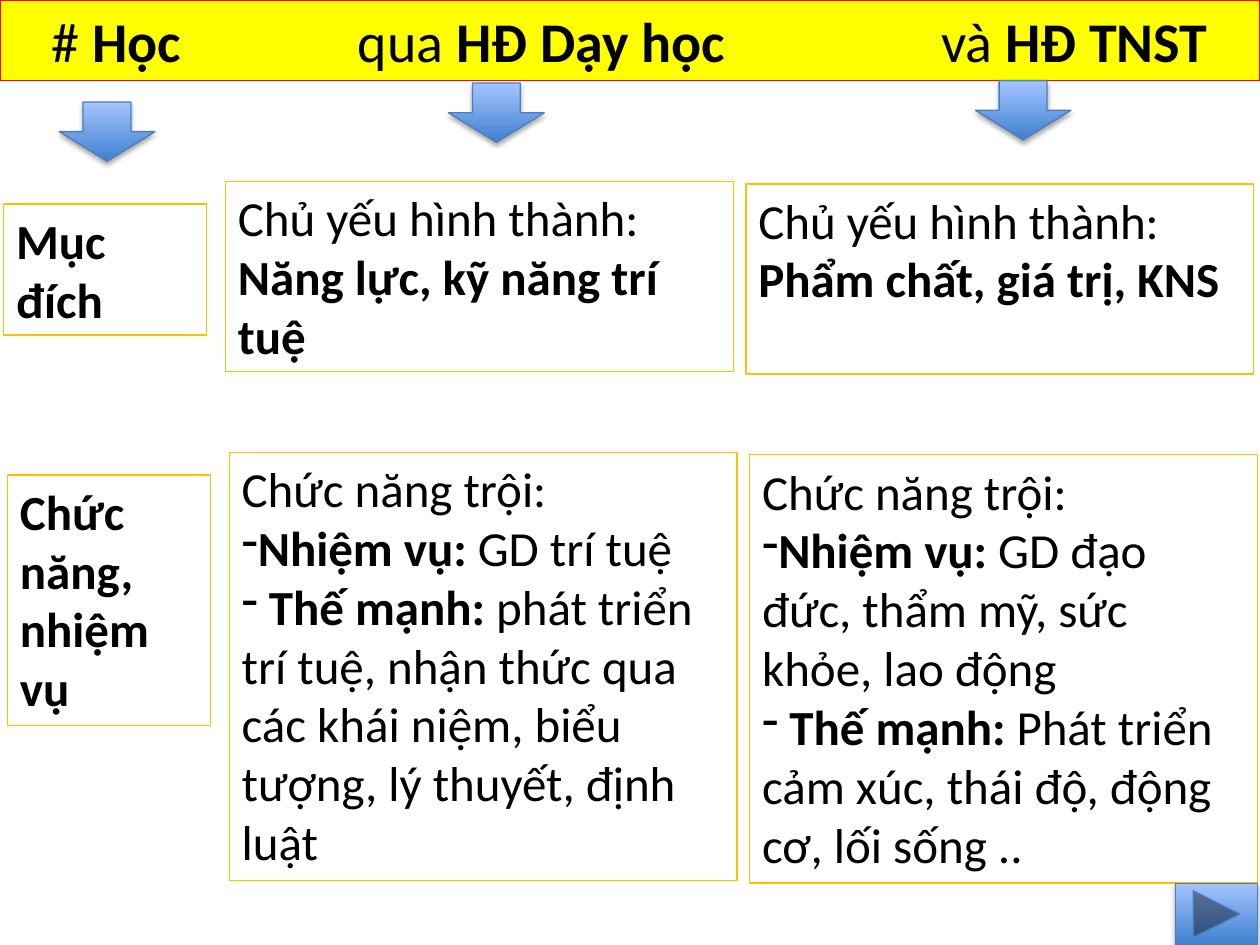
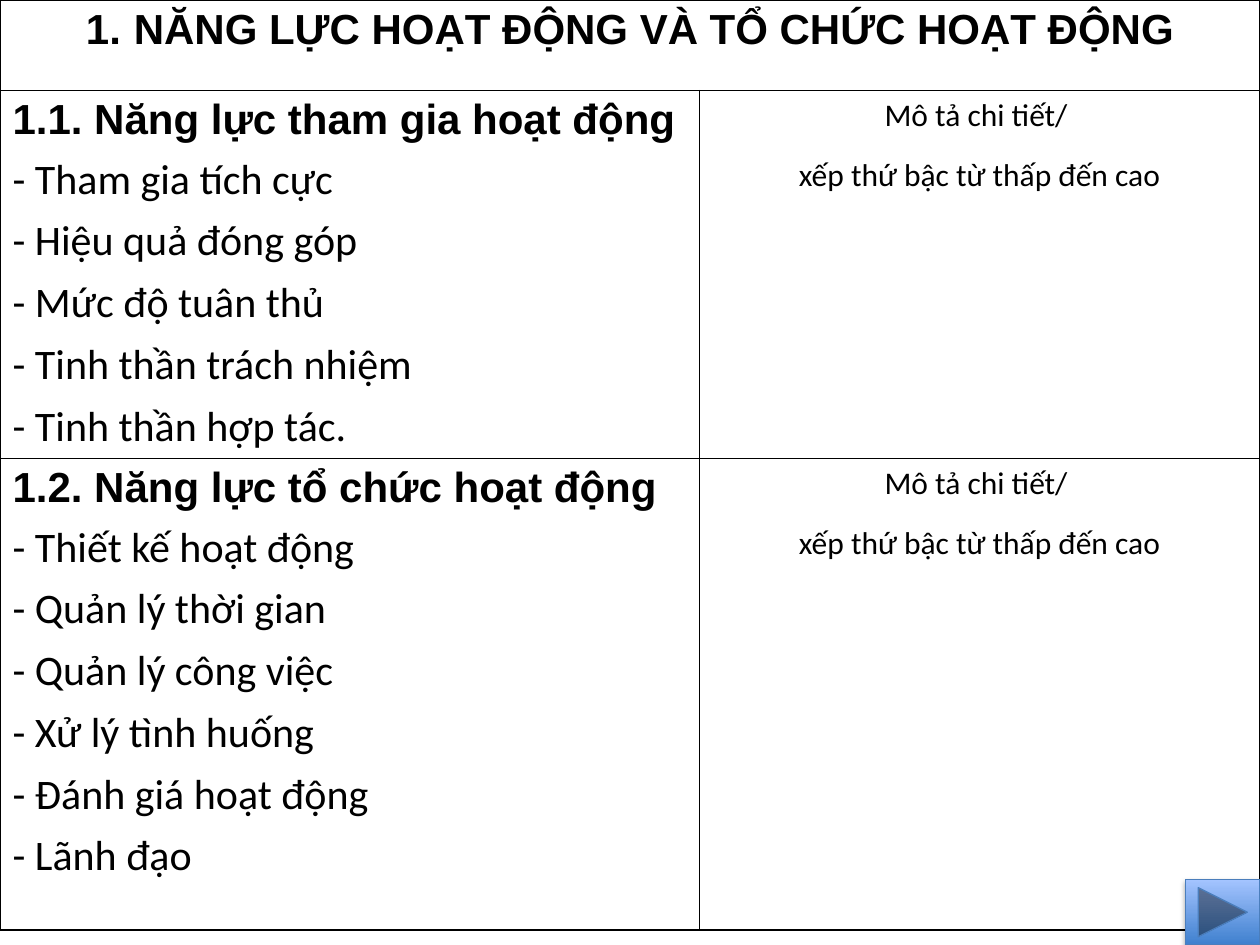
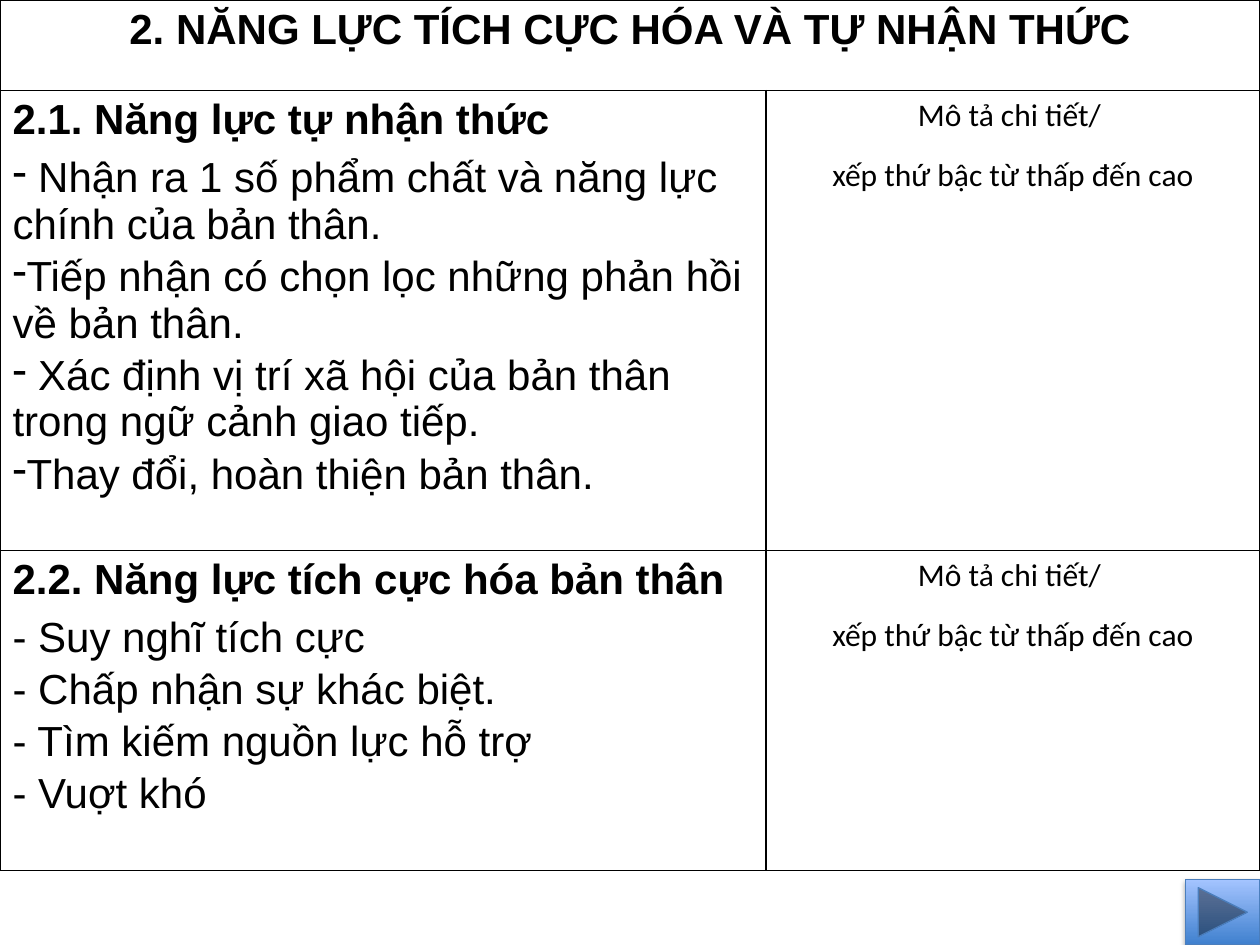
"""Builds three slides on teaching and experiential learning activities."""
from dataclasses import dataclass

from lxml import etree
from pptx import Presentation
from pptx import util as u
from pptx.dml.color import RGBColor
from pptx.enum import shapes, text
from pptx.oxml.ns import qn


@dataclass(frozen=True)
class Theme:
    """Colours, fonts and type sizes shared by the slides."""

    black: RGBColor = RGBColor(0, 0, 0)
    band: RGBColor = RGBColor(0xFF, 0xFF, 0)
    band_line: RGBColor = RGBColor(0xFF, 0, 0)
    box_line: RGBColor = RGBColor(0xFF, 0xC0, 0)
    blue_dark: RGBColor = RGBColor(0x3F, 0x80, 0xCE)
    blue_light: RGBColor = RGBColor(0xA4, 0xC4, 0xFF)
    blue_line: RGBColor = RGBColor(0x4B, 0x7E, 0xBC)
    body: str = "Calibri"
    heading: str = "Arial"
    band_size: int = 32
    box_size: int = 28
    table_size: int = 24
    note_size: int = 18
    thin: float = 0.75
    border: float = 1


@dataclass(frozen=True)
class Group:
    """A competency heading with the criteria listed under it."""

    heading: str
    criteria: tuple
    bulleted: bool = False


THEME = Theme()
LAYOUT_TITLE_ONLY, LAYOUT_BLANK = 5, 6
NOTE = ("Mô tả chi tiết/ ", "xếp thứ bậc từ thấp đến cao")


def add_element(parent, tag, **attributes):
    """Append a drawing element with the given attributes."""
    element = etree.SubElement(parent, qn(tag))
    for name, value in attributes.items():
        element.set(name, str(value))
    return element


def set_bullet(paragraph, tag, indent=0, **attributes):
    """Give a paragraph a bullet with a hanging indent."""
    properties = paragraph._p.get_or_add_pPr()
    properties.set("marL", str(u.Inches(indent)))
    properties.set("indent", str(-u.Inches(indent)))
    add_element(properties, tag, **attributes)


def set_font(paragraph, size, name=THEME.body, bold=None):
    """Set the font of a whole paragraph."""
    font = paragraph.font
    font.size, font.name, font.bold = u.Pt(size), name, bold
    font.color.rgb = THEME.black


def write_marked(paragraph, marked):
    """Write text whose parts between asterisks are bold."""
    for index, part in enumerate(marked.split("*")):
        if part:
            run = paragraph.add_run()
            run.text = part
            run.font.bold = index % 2 == 1


def next_paragraph(frame, index):
    """Return the first paragraph of a frame, or a new one."""
    return frame.add_paragraph() if index else frame.paragraphs[0]


def add_glossy_shape(slide, kind, left, top, width, height):
    """Add a blue gradient shape with a soft shadow."""
    shape = slide.shapes.add_shape(kind, *map(u.Inches, (left, top, width, height)))
    shape.fill.gradient()
    shape.fill.gradient_angle = 90
    for stop, color in zip(shape.fill.gradient_stops, (THEME.blue_dark, THEME.blue_light)):
        stop.color.rgb = color
    for position, stop in enumerate(shape.fill.gradient_stops):
        stop.position = position
    shape.line.color.rgb = THEME.blue_line
    shape.line.width = u.Pt(THEME.thin)
    shape.shadow.inherit = False
    effects = shape._element.spPr.find(qn("a:effectLst"))
    shadow = add_element(effects, "a:outerShdw", blurRad=u.Pt(3.1), dist=u.Pt(1.8),
                         dir=5400000, rotWithShape=0)
    add_element(add_element(shadow, "a:srgbClr", val=THEME.black), "a:alpha", val=35000)


def add_next_button(slide, left, top, width, height):
    """Add the forward button in the bottom right corner."""
    add_glossy_shape(slide, shapes.MSO_SHAPE.ACTION_BUTTON_FORWARD_OR_NEXT,
                     left, top, width, height)


def add_band(slide, height, inset, columns, stops):
    """Format the title as a yellow band with column headings on tab stops."""
    title = slide.shapes.title
    title.left, title.top, title.width, title.height = map(u.Inches, (0, 0, 10, height))
    title.fill.solid()
    title.fill.fore_color.rgb = THEME.band
    title.line.color.rgb = THEME.band_line
    title.line.width = u.Pt(THEME.thin)
    frame = title.text_frame
    frame.auto_size = text.MSO_AUTO_SIZE.NONE
    frame.margin_left, frame.margin_right = u.Inches(inset), 0
    paragraph = frame.paragraphs[0]
    paragraph.alignment = text.PP_ALIGN.LEFT
    tabs = add_element(paragraph._p.get_or_add_pPr(), "a:tabLst")
    for stop in stops:
        add_element(tabs, "a:tab", pos=u.Inches(stop - inset), algn="l")
    set_font(paragraph, THEME.band_size)
    write_marked(paragraph, "\t".join(columns))


def add_box(slide, left, top, width, height, lines):
    """Add an outlined box whose lines after the first may start with a dash bullet."""
    box = slide.shapes.add_textbox(*map(u.Inches, (left, top, width, height)))
    box.line.color.rgb = THEME.box_line
    box.line.width = u.Pt(THEME.thin)
    box.text_frame.word_wrap = True
    for index, line in enumerate(lines):
        paragraph = next_paragraph(box.text_frame, index)
        if line.startswith("-"):
            set_bullet(paragraph, "a:buChar", char="-")
        set_font(paragraph, THEME.box_size)
        write_marked(paragraph, line.removeprefix("-"))


def add_comparison_row(slide, left, top, label_height, height, label, teaching, experience):
    """Add a label and the two boxes it compares."""
    add_box(slide, left, top + 0.18, 1.61, label_height, [label])
    add_box(slide, left + 1.76, top, 4.03, height, teaching)
    add_box(slide, left + 5.89, top + 0.02, 4.03, height, experience)


def format_cell(cell):
    """Give a cell black borders and no fill."""
    properties = cell._tc.get_or_add_tcPr()
    for side in ("a:lnL", "a:lnR", "a:lnT", "a:lnB"):
        line = add_element(properties, side, w=u.Pt(THEME.border))
        add_element(add_element(line, "a:solidFill"), "a:srgbClr", val=THEME.black)
    cell.fill.background()


def write_group(cell, group, font, space_after):
    """Write a competency heading and its criteria."""
    for index, line in enumerate((group.heading, *group.criteria)):
        paragraph = next_paragraph(cell.text_frame, index)
        paragraph.space_before = u.Pt(3 if index else 0)
        paragraph.space_after = u.Pt(space_after if index else 3)
        if index and group.bulleted:
            set_bullet(paragraph, "a:buChar", char="-")
        set_font(paragraph, THEME.table_size, font if index else THEME.heading, index == 0)
        paragraph.add_run().text = line


def write_note(cell):
    """Write the centred note on the description column."""
    for index, line in enumerate(NOTE):
        paragraph = next_paragraph(cell.text_frame, index)
        paragraph.alignment = text.PP_ALIGN.CENTER
        paragraph.space_before = u.Pt(6 if index else 0)
        paragraph.space_after = u.Pt(6)
        set_font(paragraph, THEME.note_size)
        paragraph.add_run().text = line


def write_table_title(cell, title, numbered):
    """Write the table title, numbered automatically if asked."""
    paragraph = cell.text_frame.paragraphs[0]
    paragraph.alignment = text.PP_ALIGN.CENTER
    paragraph.space_after = u.Pt(6)
    if numbered:
        set_bullet(paragraph, "a:buAutoNum", 0.38, type="arabicPeriod")
    else:
        set_bullet(paragraph, "a:buNone", 0.38)
    set_font(paragraph, THEME.table_size, THEME.heading, True)
    paragraph.add_run().text = title


def add_competency_slide(presentation, title, groups, widths, heights, font,
                         space_after=0, numbered=False):
    """Add a slide with a full-width competency table and a forward button."""
    slide = presentation.slides.add_slide(presentation.slide_layouts[LAYOUT_BLANK])
    frame = slide.shapes.add_table(len(heights), len(widths), 0, 0,
                                   u.Inches(sum(widths)), u.Inches(sum(heights)))
    table = frame.table
    table.first_row = table.horz_banding = False
    for column, width in zip(table.columns, widths):
        column.width = u.Inches(width)
    for row, height in zip(table.rows, heights):
        row.height = u.Inches(height)
    for cell in table.iter_cells():
        format_cell(cell)
    table.cell(0, 0).merge(table.cell(0, 1))
    write_table_title(table.cell(0, 0), title, numbered)
    for row, group in enumerate(groups, start=1):
        write_group(table.cell(row, 0), group, font, space_after)
        write_note(table.cell(row, 1))
    add_next_button(slide, 9.41, 6.98, 0.59, 0.52)


def add_comparison_slide(presentation):
    """Add the slide comparing teaching with experiential activities."""
    slide = presentation.slides.add_slide(presentation.slide_layouts[LAYOUT_TITLE_ONLY])
    add_band(slide, 0.64, 0.41, ("# *Học*", "qua *HĐ Dạy học*", "và *HĐ TNST*"), (2.84, 7.47))
    add_comparison_row(
        slide, 0.03, 1.44, 1.04, 1.51, "*Mục đích*",
        ("Chủ yếu hình thành:", "*Năng lực, kỹ năng trí tuệ*"),
        ("Chủ yếu hình thành:", "*Phẩm chất, giá trị, KNS*"))
    for left, top in ((7.74, 0.64), (3.56, 0.66), (0.47, 0.81)):
        add_glossy_shape(slide, shapes.MSO_SHAPE.DOWN_ARROW, left, top, 0.76, 0.47)
    add_comparison_row(
        slide, 0.06, 3.59, 1.99, 3.4, "*Chức năng, nhiệm vụ*",
        ("Chức năng trội:", "-*Nhiệm vụ: *GD trí tuệ",
         "-* Thế mạnh: *phát triển trí tuệ, nhận thức qua các khái niệm, biểu tượng, "
         "lý thuyết, định luật"),
        ("Chức năng trội:", "-*Nhiệm vụ:* GD đạo đức, thẩm mỹ, sức khỏe, lao động",
         "-* Thế mạnh: *Phát triển cảm xúc, thái độ, động cơ, lối sống .."))
    add_next_button(slide, 9.33, 7.01, 0.65, 0.49)


def main():
    """Build and save the presentation."""
    presentation = Presentation()
    presentation.slide_width, presentation.slide_height = u.Inches(10), u.Inches(7.5)
    add_comparison_slide(presentation)
    add_competency_slide(
        presentation, "NĂNG LỰC HOẠT ĐỘNG VÀ TỔ CHỨC HOẠT ĐỘNG",
        (Group("1.1. Năng lực tham gia hoạt động",
               ("- Tham gia tích cực", "- Hiệu quả đóng góp", "- Mức độ tuân thủ",
                "- Tinh thần trách nhiệm", "- Tinh thần hợp tác.")),
         Group("1.2. Năng lực tổ chức hoạt động",
               ("- Thiết kế hoạt động", "- Quản lý thời gian", "- Quản lý công việc",
                "- Xử lý tình huống", "- Đánh giá hoạt động", "- Lãnh đạo"))),
        (5.55, 4.45), (0.72, 2.92, 3.74), THEME.body, space_after=3, numbered=True)
    add_competency_slide(
        presentation, "2. NĂNG LỰC TÍCH CỰC HÓA VÀ TỰ NHẬN THỨC",
        (Group("2.1. Năng lực tự nhận thức",
               (" Nhận ra 1 số phẩm chất và năng lực chính của bản thân.",
                "Tiếp nhận có chọn lọc những phản hồi về bản thân.",
                " Xác định vị trí xã hội của bản thân trong ngữ cảnh giao tiếp.",
                "Thay đổi, hoàn thiện bản thân."), bulleted=True),
         Group("2.2. Năng lực tích cực hóa bản thân",
               ("- Suy nghĩ tích cực", "- Chấp nhận sự khác biệt.",
                "- Tìm kiếm nguồn lực hỗ trợ", "- Vuợt khó"))),
        (6.08, 3.92), (0.72, 3.65, 2.54), THEME.heading)
    presentation.save("out.pptx")


if __name__ == "__main__":
    main()
